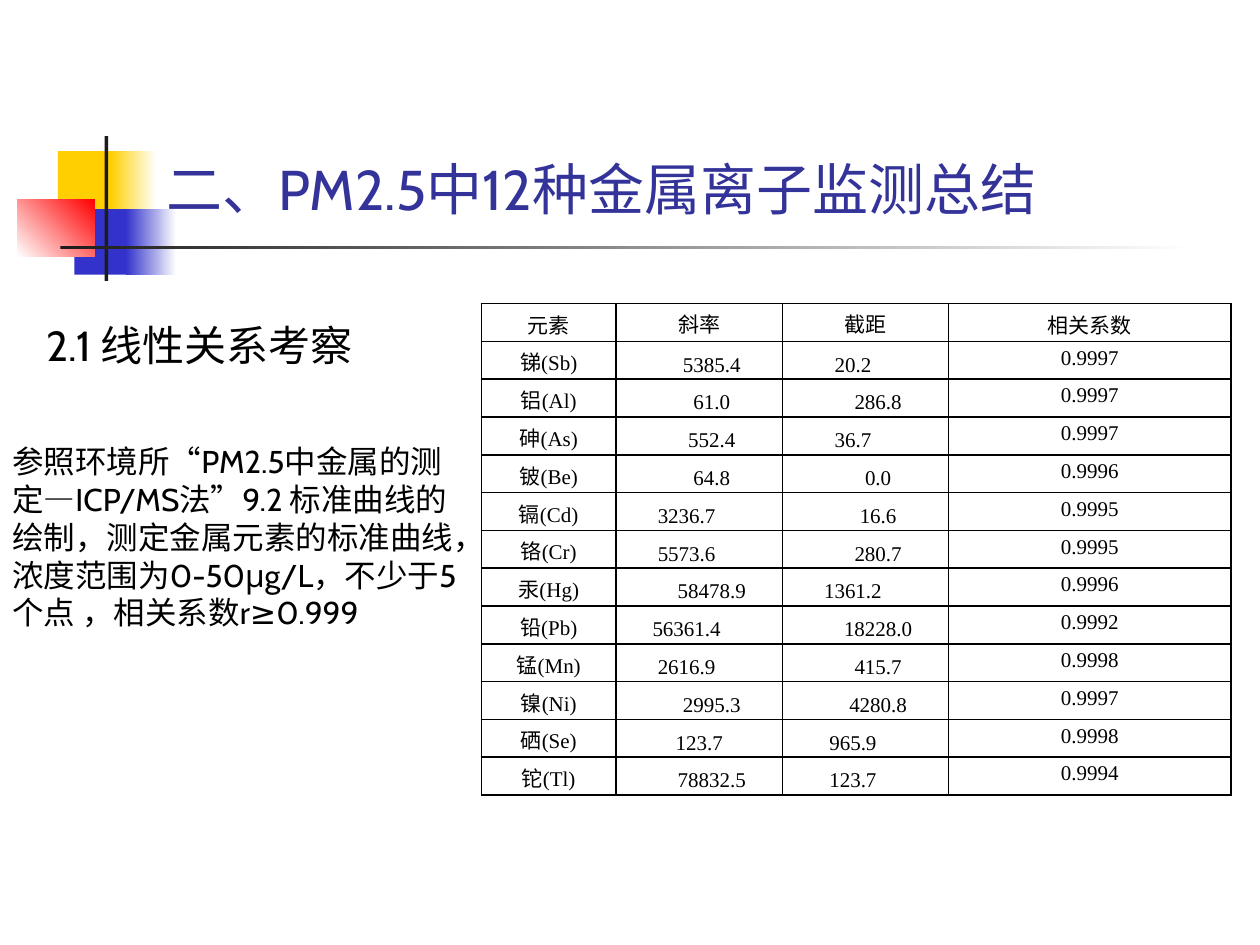
import pptx
import pptx.util
import pptx.dml.color
import pptx.enum.shapes
import pptx.enum.text
import pptx.oxml
import pptx.oxml.ns

COLORS = {"yellow": "FFCF01", "blue": "3333CC", "red": "FF0000", "white": "FFFFFF",
          "bar": "1C1C1C", "title": "333399", "text": "000000"}
ALIGN = pptx.enum.text.PP_ALIGN
ANCHOR = pptx.enum.text.MSO_ANCHOR
AUTOSIZE = pptx.enum.text.MSO_AUTO_SIZE

BLOCKS = [
    ((4.6, 12, 4.8, 5.2), ["yellow"], 0),
    ((8.8, 12, 3.6, 5.2), ["yellow", "white"], 0),
    ((5.9, 16.6, 4.6, 5.2), ["blue"], 0),
    ((10, 16.6, 4, 5.2), ["blue", "white"], 0),
    ((1.4, 15.8, 6.1, 4.6), ["white", "red"], 45),
    ((8.3, 10.8, 0.3, 11.5), ["bar"], 0),
    ((4.8, 19.5, 90, 0.3), ["bar", "white"], 0),
]
HEADINGS = ["元素", "斜率", "截距", "相关系数"]
CALIBRATIONS = [
    ("锑(Sb)", "5385.4", "20.2", "0.9997"),
    ("铝(Al)", "61.0", "286.8", "0.9997"),
    ("砷(As)", "552.4", "36.7", "0.9997"),
    ("铍(Be)", "64.8", "0.0", "0.9996"),
    ("镉(Cd)", "3236.7", "16.6", "0.9995"),
    ("铬(Cr)", "5573.6", "280.7", "0.9995"),
    ("汞(Hg)", "58478.9", "1361.2", "0.9996"),
    ("铅(Pb)", "56361.4", "18228.0", "0.9992"),
    ("锰(Mn)", "2616.9", "415.7", "0.9998"),
    ("镍(Ni)", "2995.3", "4280.8", "0.9997"),
    ("硒(Se)", "123.7", "965.9", "0.9998"),
    ("铊(Tl)", "78832.5", "123.7", "0.9994"),
]
SLOPE_SHIFTS = ["", *"RRRRLLRLLR", "", "R"]
INTERCEPT_SHIFTS = ["", *"LRLRRRLRRRLL"]
COLUMN_ANCHORS = [ANCHOR.MIDDLE, ANCHOR.BOTTOM, ANCHOR.BOTTOM, ANCHOR.TOP]


class MetalReport:
    """Holds the style and current slide, placed on a grid of 100 columns by 75 rows."""

    def __init__(self):
        self.deck = pptx.Presentation()
        self.deck.slide_width = pptx.util.Inches(10)
        self.deck.slide_height = pptx.util.Inches(7.5)
        self.unit = self.deck.slide_width / 100
        self.slide = self.deck.slides.add_slide(self.deck.slide_layouts[5])

    def grid(self, *lengths):
        return [round(length * self.unit) for length in lengths]

    def color(self, name):
        return pptx.dml.color.RGBColor.from_string(COLORS[name])

    def assign(self, target, values):
        for name, value in values.items():
            setattr(target, name, value)

    def fill_frame(self, frame, text, size, color="text", font="Cabin", align=ALIGN.LEFT):
        paragraph = frame.paragraphs[0]
        paragraph.alignment = align
        run = paragraph.add_run()
        run.text = text
        self.assign(run.font, {"size": pptx.util.Pt(size), "name": font})
        run.font.color.rgb = self.color(color)

    def block(self, box, colors, angle):
        block = self.slide.shapes.add_shape(
            pptx.enum.shapes.MSO_SHAPE.RECTANGLE, *self.grid(*box))
        block.shadow.inherit = False
        block.line.fill.background()
        if len(colors) == 1:
            block.fill.solid()
            block.fill.fore_color.rgb = self.color(colors[0])
            return
        block.fill.gradient()
        block.fill.gradient_angle = angle
        for stop, name in zip(block.fill.gradient_stops, colors):
            stop.color.rgb = self.color(name)

    def title(self, box, text):
        title = self.slide.shapes.title
        self.assign(title, dict(zip(("left", "top", "width", "height"), self.grid(*box))))
        self.assign(title.text_frame, {"vertical_anchor": ANCHOR.BOTTOM, "word_wrap": True,
                                       "auto_size": AUTOSIZE.NONE})
        self.fill_frame(title.text_frame, text, 32, "title")
        self.slide.shapes.element.append(title.element)

    def text(self, box, text, size, anchor=ANCHOR.TOP, wrap=True):
        frame = self.slide.shapes.add_textbox(*self.grid(*box)).text_frame
        self.assign(frame, {"vertical_anchor": anchor, "word_wrap": wrap,
                            "auto_size": AUTOSIZE.SHAPE_TO_FIT_TEXT})
        self.fill_frame(frame, text, size)

    def border(self, cell):
        properties = cell._tc.get_or_add_tcPr()
        for position, side in enumerate(("lnL", "lnR", "lnT", "lnB")):
            properties.insert(position, pptx.oxml.parse_xml(
                f'<a:{side} {pptx.oxml.ns.nsdecls("a")} w="12700"><a:solidFill>'
                f'<a:srgbClr val="{COLORS["text"]}"/></a:solidFill></a:{side}>'))

    def table(self, box, widths, rows, shifts):
        table = self.slide.shapes.add_table(len(rows), len(widths), *self.grid(*box)).table
        self.assign(table, {"first_row": False, "horz_banding": False})
        for column, width in zip(table.columns, self.grid(*widths)):
            column.width = width
        for r, values in enumerate(rows):
            for c, value in enumerate(values):
                cell = table.cell(r, c)
                shift = shifts[c][r] if c in shifts else ""
                left, right, top, bottom = self.grid(
                    3 if shift == "R" else 1, 3 if shift == "L" else 1, 0.4, 0.2)
                self.assign(cell, {"margin_left": left, "margin_right": right,
                                   "margin_top": top, "margin_bottom": bottom,
                                   "vertical_anchor": COLUMN_ANCHORS[c]})
                cell.fill.background()
                self.border(cell)
                self.fill_frame(cell.text_frame, value, 12, font="Times New Roman",
                                align=ALIGN.CENTER)


def main():
    report = MetalReport()
    for box, colors, angle in BLOCKS:
        report.block(box, colors, angle)
    report.title((12.2, 2.1, 85.2, 16), "二、PM2.5中12种金属离子监测总结")
    report.text((0, 34.6, 37.4, 16),
                "参照环境所“PM2.5中金属的测定—ICP/MS法”9.2 标准曲线的绘制，"
                "测定金属元素的标准曲线，浓度范围为0-50μg/L，不少于5个点 ，相关系数r≥0.999",
                18, ANCHOR.MIDDLE)
    report.table((38.2, 24.1, 59.5, 39), (10.7, 13.2, 13.2, 22.4),
                 [HEADINGS, *CALIBRATIONS], {1: SLOPE_SHIFTS, 2: INTERCEPT_SHIFTS})
    report.text((2.7, 24.9, 27.7, 5), "2.1 线性关系考察", 24, wrap=False)
    report.deck.save("out.pptx")


if __name__ == "__main__":
    main()
